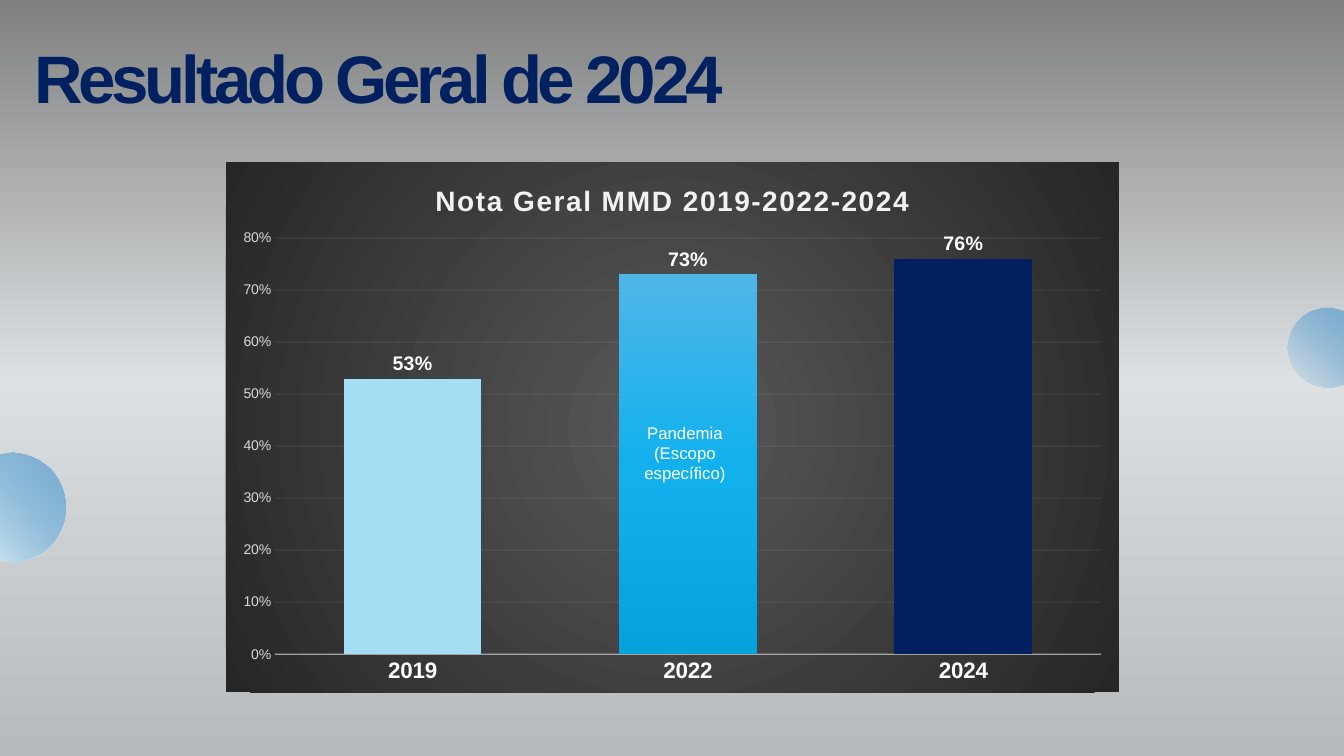
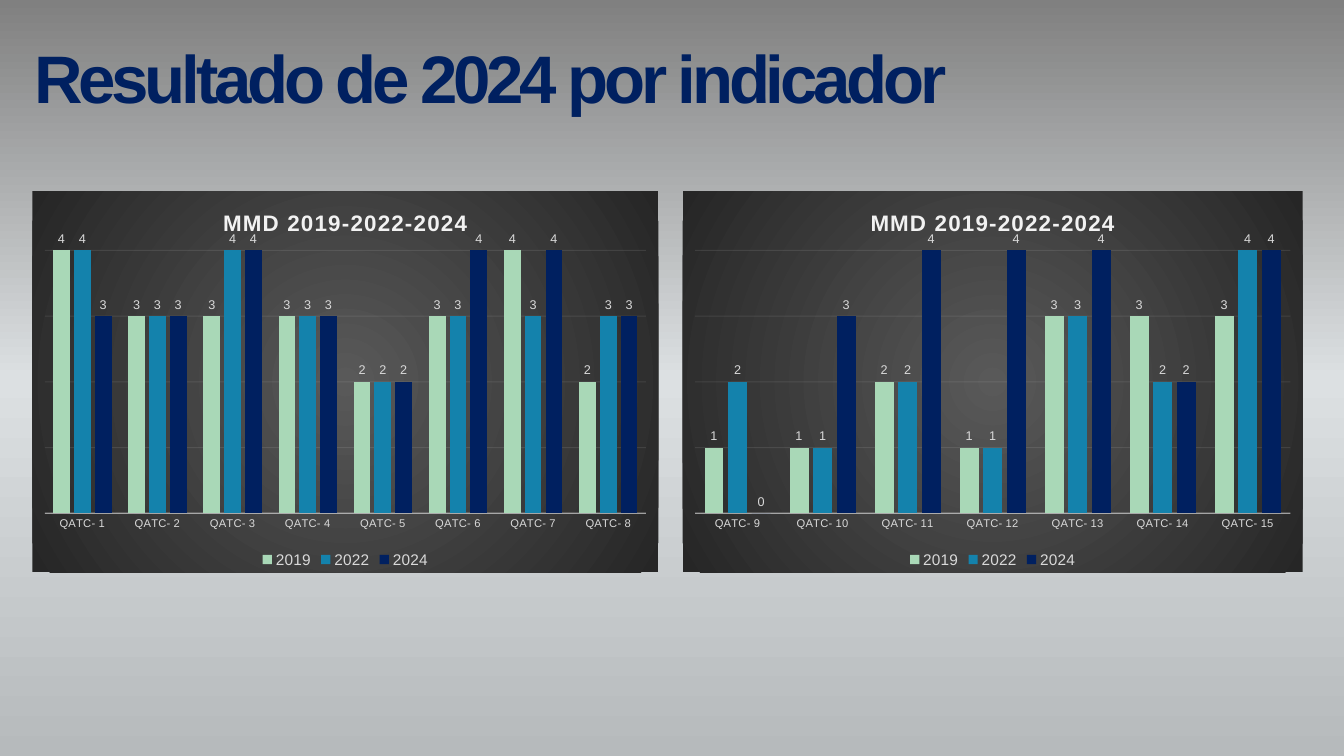
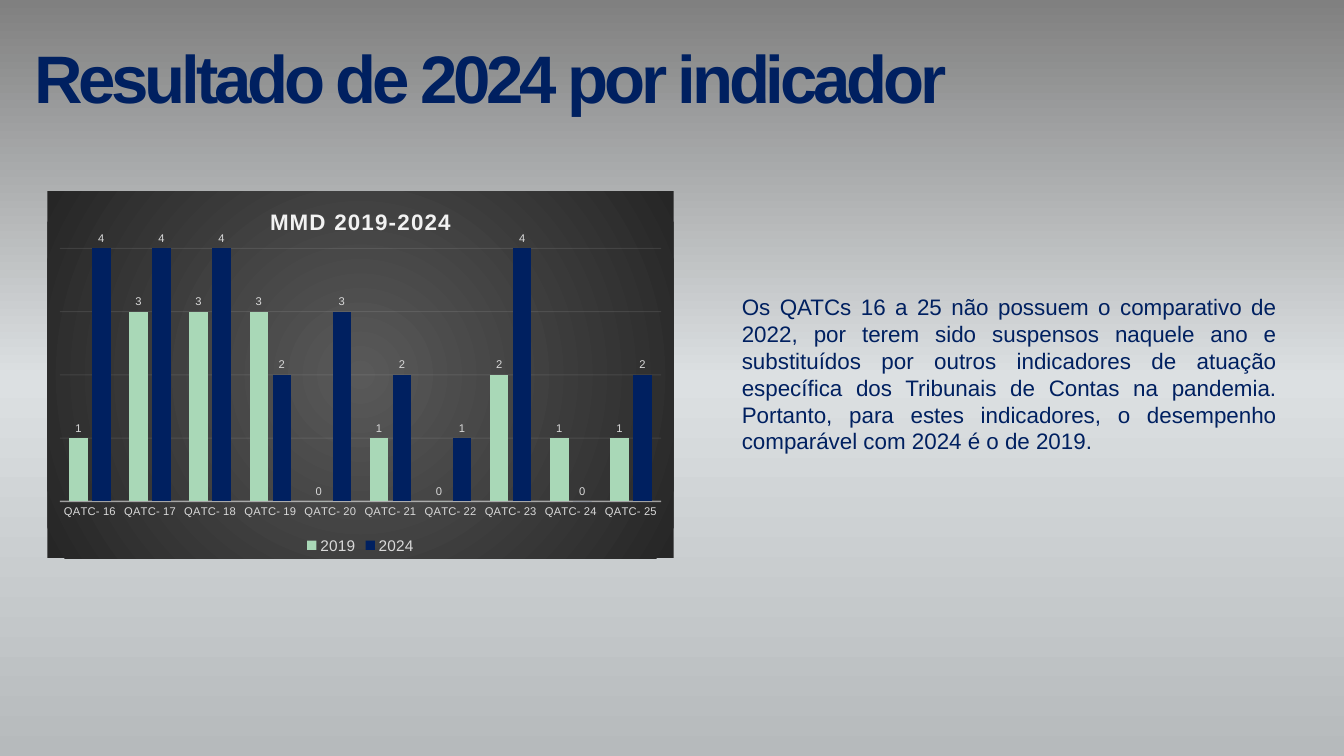
from lxml.etree import SubElement
from pptx import Presentation
from pptx.chart.data import CategoryChartData
from pptx.dml.color import RGBColor
from pptx.enum.chart import XL_CHART_TYPE, XL_LABEL_POSITION, XL_LEGEND_POSITION, XL_TICK_MARK
from pptx.enum.shapes import MSO_SHAPE
from pptx.enum.text import MSO_ANCHOR, PP_ALIGN
from pptx.oxml import parse_xml
from pptx.oxml.ns import nsdecls, qn
from pptx.util import Inches, Pt

WIDTH, HEIGHT = 13.33, 7.5
FONT = "Arial"
NAVY, WHITE, LIGHT, PALE = "002060", "FFFFFF", "D9D9D9", "F2F2F2"
YEAR_COLORS = {"2019": "A9D8B7", "2022": "1482AC", "2024": NAVY}
BACKDROP = [(0, "808080"), (50, "DCE0E2"), (100, "B6BABC")]
PANEL = [(0, "595959"), (100, "262626")]
PANDEMIC_BAR = [(0, "4FB6E9"), (50, "12B1EE"), (100, "06A2DD")]
TITLE_BOX = (1.8, 2.93, 92.3, 15.87)
CHART_TOP = 25.33


def color(value):
    return RGBColor.from_string(value)


def box(left, top, width, height):
    sizes = (WIDTH, HEIGHT, WIDTH, HEIGHT)
    return [Inches(size * percent / 100)
            for size, percent in zip(sizes, (left, top, width, height))]


def apply(target, **values):
    for name, value in values.items():
        setattr(target, name, value)


def set_font(font, size, hex_color, bold=False):
    apply(font, name=FONT, size=Pt(size), bold=bold)
    font.color.rgb = color(hex_color)


def set_tracking(element, points):
    for properties in element.iter(qn("a:rPr")):
        properties.set("spc", str(points * 100))


def set_alpha(color_element, percent):
    SubElement(color_element, qn("a:alpha")).set("val", str(percent * 1000))


def set_gradient(holder, stops, angle=None, last_alpha=None):
    stop_xml = "".join(
        f'<a:gs pos="{position * 1000}"><a:srgbClr val="{value}"/></a:gs>'
        for position, value in stops)
    if angle is None:
        direction = ('<a:path path="circle"><a:fillToRect l="50000" t="50000" '
                     'r="50000" b="50000"/></a:path>')
    else:
        direction = f'<a:lin ang="{angle * 60000}" scaled="0"/>'
    gradient = parse_xml(f'<a:gradFill {nsdecls("a")} rotWithShape="1">'
                         f'<a:gsLst>{stop_xml}</a:gsLst>{direction}</a:gradFill>')
    if last_alpha is not None:
        set_alpha(gradient.findall(".//" + qn("a:srgbClr"))[-1], last_alpha)
    solid = holder.find(".//" + qn("a:solidFill"))
    solid.getparent().replace(solid, gradient)


def set_backdrop(presentation):
    master = presentation.slide_master
    master.background.fill.solid()
    set_gradient(master.element.find(".//" + qn("p:bgPr")), BACKDROP, 90)


def add_titled_slide(presentation, text):
    slide = presentation.slides.add_slide(presentation.slide_layouts[5])
    title = slide.shapes.title
    title.left, title.top, title.width, title.height = box(*TITLE_BOX)
    frame = title.text_frame
    apply(frame, text=text, word_wrap=True, vertical_anchor=MSO_ANCHOR.MIDDLE)
    paragraph = frame.paragraphs[0]
    apply(paragraph, alignment=PP_ALIGN.LEFT, line_spacing=0.9)
    set_font(paragraph.runs[0].font, 48, NAVY, True)
    set_tracking(title.element, -3)
    return slide


def add_text(slide, area, lines, size, hex_color, alignment, anchor=MSO_ANCHOR.TOP):
    frame = slide.shapes.add_textbox(*box(*area)).text_frame
    apply(frame, text="\n".join(lines), word_wrap=True, vertical_anchor=anchor)
    for paragraph in frame.paragraphs:
        paragraph.alignment = alignment
        set_font(paragraph.runs[0].font, size, hex_color)


def add_bubble(slide, area, light):
    bubble = slide.shapes.add_shape(MSO_SHAPE.OVAL, *box(*area))
    bubble.shadow.inherit = False
    bubble.line.fill.background()
    bubble.fill.solid()
    set_gradient(bubble.element.spPr, [(0, light), (100, "2683C6")], 315, 50)


def set_plot_layout(chart, x, y, w, h):
    plot_area = chart.element.find(".//" + qn("c:plotArea"))
    for old_layout in plot_area.findall(qn("c:layout")):
        plot_area.remove(old_layout)
    values = dict(layoutTarget="inner", xMode="edge", yMode="edge", x=x, y=y, w=w, h=h)
    fields = "".join(f'<c:{name} val="{value}"/>' for name, value in values.items())
    plot_area.insert(0, parse_xml(f'<c:layout {nsdecls("c")}><c:manualLayout>'
                                  f'{fields}</c:manualLayout></c:layout>'))


def set_panel(chart):
    panel = parse_xml(f'<c:spPr {nsdecls("c", "a")}><a:solidFill/>'
                      '<a:ln><a:noFill/></a:ln></c:spPr>')
    set_gradient(panel, PANEL)
    chart.element.find(qn("c:chart")).addnext(panel)


def set_axes(chart, category_font, maximum, step):
    category_axis, value_axis = chart.category_axis, chart.value_axis
    for axis in (category_axis, value_axis):
        apply(axis, major_tick_mark=XL_TICK_MARK.NONE, minor_tick_mark=XL_TICK_MARK.NONE)
    set_font(category_axis.tick_labels.font, *category_font)
    apply(value_axis, minimum_scale=0, maximum_scale=maximum, major_unit=step,
          has_major_gridlines=True)
    value_axis.format.line.fill.background()
    lines = [(category_axis.format.line, 1, "c:catAx/c:spPr", 54),
             (value_axis.major_gridlines.format.line, 0.75, "c:majorGridlines", 10)]
    for line, width, owner, alpha in lines:
        line.width = Pt(width)
        line.color.rgb = color(PALE)
        owner_path = "/".join(qn(tag) for tag in owner.split("/"))
        set_alpha(chart.element.find(f".//{owner_path}//{qn('a:srgbClr')}"), alpha)


def add_column_chart(slide, area, title, title_size, categories, series, label_font,
                     category_font, maximum, step, layout, number_format="General"):
    data = CategoryChartData(number_format=number_format)
    data.categories = categories
    for name, values in series.items():
        data.add_series(name, values)
    chart = slide.shapes.add_chart(
        XL_CHART_TYPE.COLUMN_CLUSTERED, *box(*area), data).chart
    apply(chart.font, name=FONT, size=Pt(10))
    apply(chart, has_title=True, has_legend=False)
    chart.chart_title.include_in_layout = False
    frame = chart.chart_title.text_frame
    frame.text = title
    set_font(frame.paragraphs[0].runs[0].font, title_size, PALE, True)
    set_tracking(chart.element, 1)
    plot = chart.plots[0]
    apply(plot, gap_width=100, overlap=-24, vary_by_categories=False, has_data_labels=True)
    labels = plot.data_labels
    apply(labels, show_value=True, position=XL_LABEL_POSITION.OUTSIDE_END,
          number_format=number_format, number_format_is_linked=False)
    set_font(labels.font, *label_font)
    set_axes(chart, category_font, maximum, step)
    set_plot_layout(chart, *layout)
    set_panel(chart)
    return chart


def add_overall_chart(slide):
    chart = add_column_chart(
        slide, (16.8, 21.47, 66.46, 70.13), "Nota Geral MMD 2019-2022-2024", 20,
        ["2019", "2022", "2024"], {"Series 1": [0.53, 0.73, 0.76]},
        (14, WHITE, True), (16, WHITE, True), 0.8, 0.1,
        (0.055, 0.143, 0.925, 0.785), "0%")
    tick_labels = chart.value_axis.tick_labels
    apply(tick_labels, number_format="0%", number_format_is_linked=False)
    set_font(tick_labels.font, 10, LIGHT)
    bars = chart.plots[0].series[0]
    bars.format.fill.solid()
    set_gradient(chart.element.find(f".//{qn('c:ser')}/{qn('c:spPr')}"), PANDEMIC_BAR, 90)
    for index, value in {0: "A4DEF4", 2: NAVY}.items():
        fill = bars.points[index].format.fill
        fill.solid()
        fill.fore_color.rgb = color(value)


def add_indicator_chart(slide, left, width, height, first, series, label_size=9):
    count = len(series["2019"])
    chart = add_column_chart(
        slide, (left, CHART_TOP, width, height), "MMD " + "-".join(series), 16,
        [f"QATC- {number}" for number in range(first, first + count)], series,
        (label_size, LIGHT), (8, LIGHT), 4, 1, (0.02, 0.155, 0.96, 0.69))
    chart.value_axis.visible = False
    chart.has_legend = True
    apply(chart.legend, position=XL_LEGEND_POSITION.BOTTOM, include_in_layout=False)
    set_font(chart.legend.font, 11, LIGHT)
    for bars in chart.plots[0].series:
        bars.format.fill.solid()
        bars.format.fill.fore_color.rgb = color(YEAR_COLORS[bars.name])


def main():
    presentation = Presentation()
    apply(presentation, slide_width=Inches(WIDTH), slide_height=Inches(HEIGHT))
    set_backdrop(presentation)

    overall = add_titled_slide(presentation, "Resultado Geral de 2024")
    add_overall_chart(overall)
    add_text(overall, (46.5, 53.6, 8.93, 12.53), ["Pandemia", "(Escopo específico)"],
             12, WHITE, PP_ALIGN.CENTER, MSO_ANCHOR.MIDDLE)
    add_bubble(overall, (95.8, 40.67, 5.93, 10.53), "DFE3E5")
    add_bubble(overall, (-3, 59.87, 7.88, 14.4), "E8F7FC")

    indicator_title = "Resultado de 2024 por indicador"
    compared = add_titled_slide(presentation, indicator_title)
    add_indicator_chart(compared, 2.4, 46.59, 50.4, 1, {
        "2019": [4, 3, 3, 3, 2, 3, 4, 2],
        "2022": [4, 3, 4, 3, 2, 3, 3, 3],
        "2024": [3, 3, 4, 3, 2, 4, 4, 3]})
    add_indicator_chart(compared, 50.79, 46.14, 50.4, 9, {
        "2019": [1, 1, 2, 1, 3, 3, 3],
        "2022": [2, 1, 2, 1, 3, 2, 4],
        "2024": [0, 3, 4, 4, 4, 2, 4]})

    suspended = add_titled_slide(presentation, indicator_title)
    add_text(suspended, (54.46, 38.13, 41.26, 22.93), [
        "Os QATCs 16 a 25 não possuem o comparativo de 2022, por terem sido suspensos "
        "naquele ano e substituídos por outros indicadores de atuação específica dos "
        "Tribunais de Contas na pandemia. Portanto, para estes indicadores, o desempenho "
        "comparável com 2024 é o de 2019."], 16, NAVY, PP_ALIGN.JUSTIFY)
    add_indicator_chart(suspended, 3.53, 46.59, 48.53, 16, {
        "2019": [1, 3, 3, 3, 0, 1, 0, 2, 1, 1],
        "2024": [4, 4, 4, 2, 3, 2, 1, 4, 0, 2]}, 8)

    presentation.save("out.pptx")


if __name__ == "__main__":
    main()
